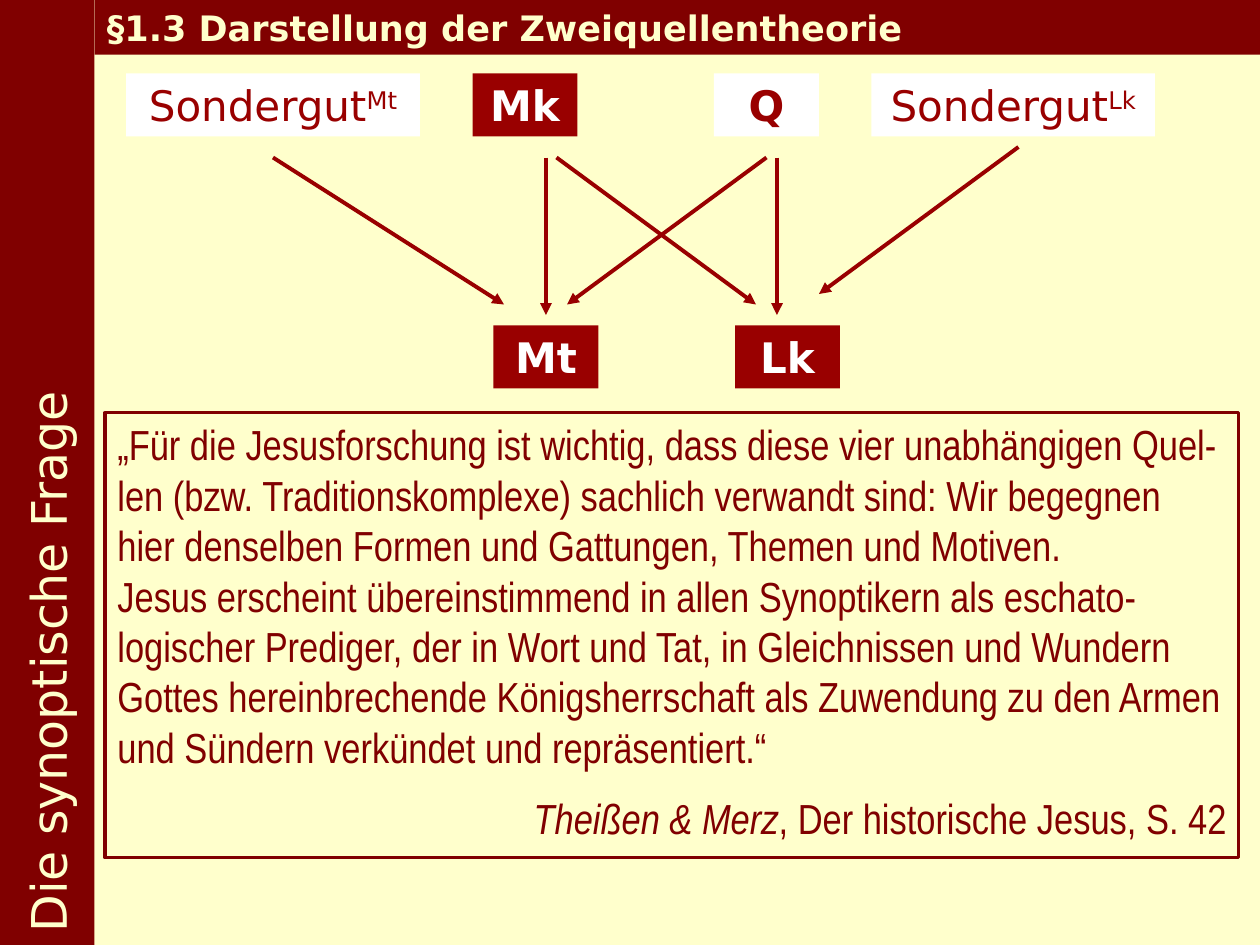
from lxml.etree import SubElement
from pptx import Presentation
from pptx.dml.color import RGBColor
from pptx.enum.shapes import MSO_CONNECTOR, MSO_SHAPE
from pptx.enum.text import MSO_ANCHOR as ANCHOR, PP_ALIGN as ALIGN
from pptx.oxml.ns import qn
from pptx.util import Pt

PX = 7620
DARK, RED, CREAM, WHITE = "800000", "990000", "FFFFCC", "FFFFFF"
SANS, NARROW = "DejaVu Sans", "Arial Narrow"


def px(*values):
    return [v * PX for v in values]


def color(fmt, value):
    fmt.rgb = RGBColor.from_string(value)


def add_box(s, box, fill, line=None, anchor=ANCHOR.TOP):
    sp = s.shapes.add_shape(MSO_SHAPE.RECTANGLE, *px(*box))
    sp.shadow.inherit = False
    sp.fill.solid()
    color(sp.fill.fore_color, fill)
    if line:
        color(sp.line.color, line)
        sp.line.width = Pt(1.75)
    else:
        sp.line.fill.background()
    sp.text_frame.word_wrap = True
    sp.text_frame.vertical_anchor = anchor
    return sp


def add_text(p, text, size=24, font=SANS, fill=RED, bold=False, italic=False,
             align=ALIGN.LEFT, raised=False):
    p.alignment = align
    r = p.add_run()
    r.text = text
    r.font.size = Pt(size)
    r.font.name = font
    r.font.bold = bold
    r.font.italic = italic
    color(r.font.color, fill)
    if raised:
        r._r.get_or_add_rPr().set("baseline", "30000")


def add_arrow(s, *ends):
    c = s.shapes.add_connector(MSO_CONNECTOR.STRAIGHT, *px(*ends))
    color(c.line.color, RED)
    c.line.width = Pt(2.25)
    SubElement(c.line._get_or_add_ln(), qn("a:tailEnd"), type="triangle")
    SubElement(c._element.spPr, qn("a:effectLst"))


def add_sidebar(s, box, text):
    sp = add_box(s, box, DARK, anchor=ANCHOR.MIDDLE)
    tf = sp.text_frame
    tf._txBody.bodyPr.set("vert", "vert270")
    add_text(tf.paragraphs[0], text, size=28, fill=CREAM)


def add_title(s, box, text):
    sp = add_box(s, box, DARK)
    add_text(sp.text_frame.paragraphs[0], text, size=20, fill=CREAM, bold=True)


def add_diagram(s, box):
    left, top, width, height = box
    node_w, node_h = 100, 60
    low = height - node_h
    nodes = [
        (330, 0, "Mk", RED, WHITE),
        (350, low, "Mt", RED, WHITE),
        (580, low, "Lk", RED, WHITE),
        (560, 0, "Q", WHITE, RED),
    ]
    for x, y, text, fill, ink in nodes:
        sp = add_box(s, (left + x, top + y, node_w, node_h), fill)
        add_text(sp.text_frame.paragraphs[0], text, fill=ink, bold=True,
                 align=ALIGN.CENTER)

    for x, w, gospel in [(0, 280, "Mt"), (width - 270, 270, "Lk")]:
        sp = add_box(s, (left + x, top, w, node_h), WHITE)
        p = sp.text_frame.paragraphs[0]
        add_text(p, "Sondergut", align=ALIGN.CENTER)
        add_text(p, gospel, align=ALIGN.CENTER, raised=True)

    arrows = [
        (140, 80, 360, 220),
        (850, 70, 660, 210),
        (400, 80, 400, 230),
        (410, 80, 600, 220),
        (620, 80, 620, 230),
        (610, 80, 420, 220),
    ]
    for x1, y1, x2, y2 in arrows:
        add_arrow(s, left + x1, top + y1, left + x2, top + y2)


def add_quote(s, box, paragraphs, author, work):
    tf = add_box(s, box, CREAM, line=DARK).text_frame
    style = dict(font=NARROW, fill=DARK)
    for i, text in enumerate(paragraphs):
        p = tf.add_paragraph() if i else tf.paragraphs[0]
        add_text(p, text, **style)
    p = tf.add_paragraph()
    p.space_before = Pt(12)
    add_text(p, author, italic=True, align=ALIGN.RIGHT, **style)
    add_text(p, work, align=ALIGN.RIGHT, **style)


def main():
    prs = Presentation()
    prs.slide_width, prs.slide_height = px(1200, 900)
    s = prs.slides.add_slide(prs.slide_layouts[6])
    s.background.fill.solid()
    color(s.background.fill.fore_color, CREAM)

    add_diagram(s, (120, 70, 980, 300))
    add_sidebar(s, (0, 0, 90, 900), "Die synoptische Frage")
    add_title(s, (90, 0, 1110, 52), "§1.3 Darstellung der Zweiquellentheorie")
    add_quote(
        s, (100, 393, 1080, 424),
        ["„Für die Jesusforschung ist wichtig, dass diese vier unabhängigen "
         "Quel-len (bzw. Traditionskomplexe) sachlich verwandt sind: Wir "
         "begegnen hier denselben Formen und Gattungen, Themen und Motiven.",
         "Jesus erscheint übereinstimmend in allen Synoptikern als "
         "eschato-logischer Prediger, der in Wort und Tat, in Gleichnissen "
         "und Wundern Gottes hereinbrechende Königsherrschaft als Zuwendung "
         "zu den Armen und Sündern verkündet und repräsentiert.“"],
        "Theißen & Merz", ", Der historische Jesus, S. 42")
    prs.save("out.pptx")


if __name__ == "__main__":
    main()
